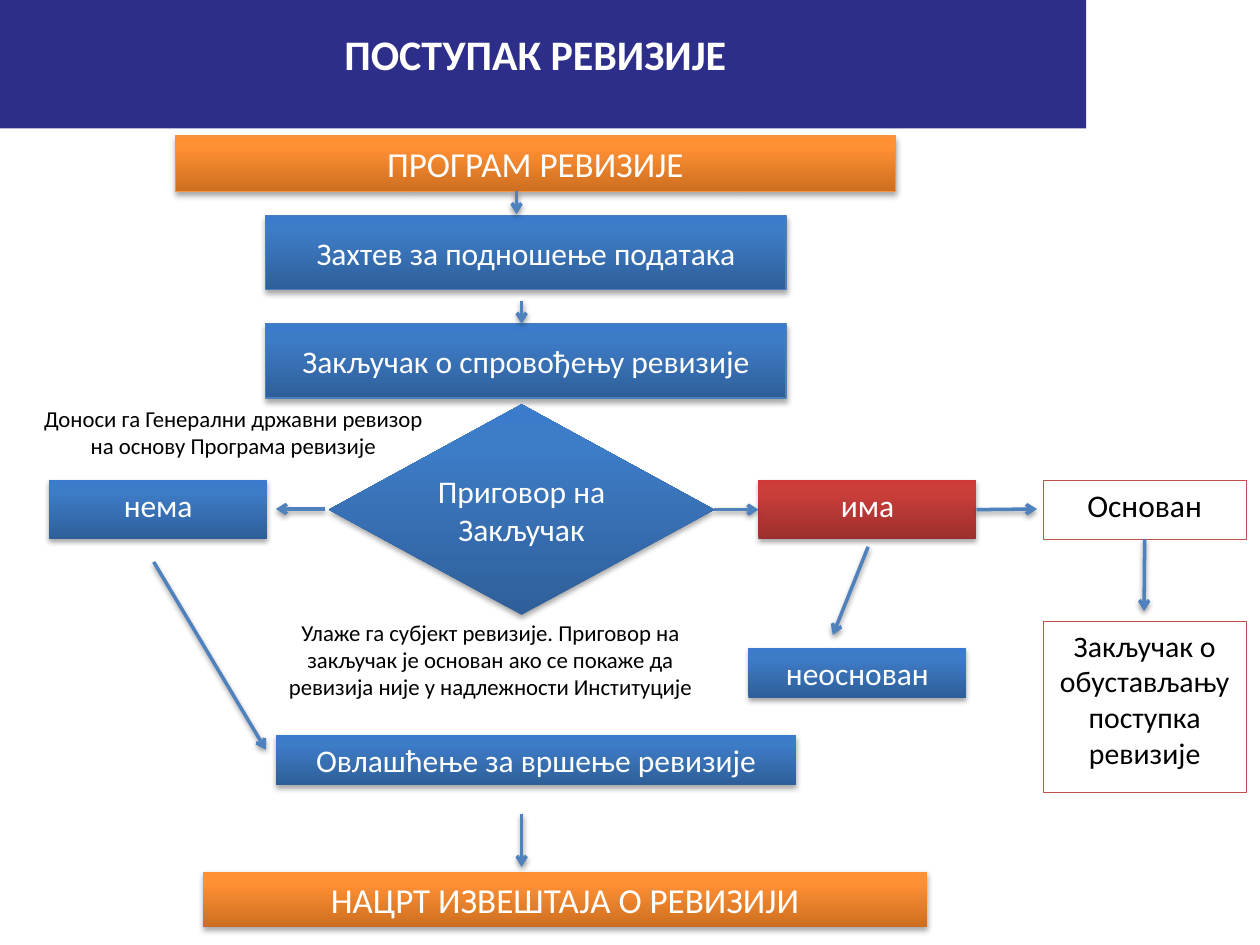
from dataclasses import dataclass

import copy
import lxml.etree
import pptx
import pptx.dml.color
import pptx.enum.shapes
import pptx.enum.text
import pptx.oxml
import pptx.oxml.ns
import pptx.util

Inches = pptx.util.Inches
Pt = pptx.util.Pt
SHAPES = pptx.enum.shapes.MSO_SHAPE
ANCHOR = pptx.enum.text.MSO_ANCHOR
qn = pptx.oxml.ns.qn

COLORS = {
    "band": "2D2D8A",
    "white": "FFFFFF",
    "black": "000000",
    "red_line": "C0504D",
    "orange_line": "F69240",
    "blue_line": "4B7EBC",
    "arrow": "4F81BD",
}
GRADIENTS = {
    "blue": ("2F5F99", "3D7CC7", "3A7CCB"),
    "orange": ("CC6E20", "FF9034", "FF9136"),
    "red": ("9C2F2D", "CB3E3A", "CE3B37"),
}
TOP, LEFT, BOTTOM, RIGHT = range(4)


@dataclass
class Box:
    left: float
    top: float
    width: float
    height: float

    def inner(self, left, top, width, height):
        return Box(self.left + left, self.top + top, width, height)

    def point(self, x, y):
        return Inches(self.left + x), Inches(self.top + y)

    def lengths(self):
        return [Inches(v) for v in (self.left, self.top, self.width, self.height)]


def rgb(value):
    return pptx.dml.color.RGBColor.from_string(value)


def add_shadow(shape, alpha, distance):
    properties = shape._element.spPr
    for effects in properties.findall(qn("a:effectLst")):
        properties.remove(effects)
    properties.append(pptx.oxml.parse_xml(
        f'<a:effectLst {pptx.oxml.ns.nsdecls("a")}>'
        f'<a:outerShdw blurRad="{Pt(3.1)}" dist="{Pt(distance)}" dir="5400000" rotWithShape="0">'
        f'<a:srgbClr val="000000"><a:alpha val="{alpha * 1000}"/></a:srgbClr>'
        '</a:outerShdw></a:effectLst>'))


def fill_gradient(fill, colors):
    fill.gradient()
    fill.gradient_angle = 90
    stop_list = fill._xPr.find(qn("a:gradFill")).find(qn("a:gsLst"))
    stop_list.append(copy.deepcopy(stop_list[0]))
    for stop, position, color in zip(fill.gradient_stops, (0, 0.8, 1), colors):
        stop.position = position
        stop.color.rgb = rgb(color)


def write(shape, text, size, color, anchor, bold=False):
    frame = shape.text_frame
    frame.word_wrap = True
    frame.vertical_anchor = anchor
    frame.text = text
    paragraph = frame.paragraphs[0]
    paragraph.alignment = pptx.enum.text.PP_ALIGN.CENTER
    font = paragraph.font
    font.name, font.size, font.bold = "Calibri", Pt(size), bold
    font.color.rgb = rgb(COLORS[color])


def add_block(slide, box, text, fill="blue", size=18, line=None, line_width=0.75,
              anchor=ANCHOR.TOP, kind=SHAPES.RECTANGLE):
    shape = slide.shapes.add_shape(kind, *box.lengths())
    shape.shadow.inherit = False
    if line:
        shape.line.color.rgb = rgb(COLORS[line])
        shape.line.width = Pt(line_width)
    else:
        shape.line.fill.background()
    if fill in GRADIENTS:
        fill_gradient(shape.fill, GRADIENTS[fill])
        add_shadow(shape, 35, 1.8)
    else:
        shape.fill.solid()
        shape.fill.fore_color.rgb = rgb(COLORS[fill])
    write(shape, text, size, "black" if fill == "white" else "white", anchor)
    return shape


def add_arrow(slide, box, start, end, begin=None, finish=None):
    arrow = slide.shapes.add_connector(
        pptx.enum.shapes.MSO_CONNECTOR.STRAIGHT, *box.point(*start), *box.point(*end))
    if begin:
        arrow.begin_connect(*begin)
    if finish:
        arrow.end_connect(*finish)
    arrow.line.color.rgb = rgb(COLORS["arrow"])
    arrow.line.width = Pt(2)
    lxml.etree.SubElement(arrow.line._get_or_add_ln(), qn("a:tailEnd"), type="arrow")
    add_shadow(arrow, 38, 1.6)


def build_header(slide, box):
    band = slide.shapes.add_shape(SHAPES.RECTANGLE, *box.lengths())
    band.shadow.inherit = False
    band.fill.solid()
    band.fill.fore_color.rgb = rgb(COLORS["band"])
    band.line.fill.background()
    title = slide.shapes.title
    band._element.addnext(title._element)
    title.left, title.top, title.width, title.height = box.inner(0.51, 0.18, 7.48, 0.5).lengths()
    write(title, "ПОСТУПАК РЕВИЗИЈЕ", 24, "white", ANCHOR.TOP, bold=True)


def build_notes(slide, box):
    notes = [
        ((0, 0, 3.3, 0.54), "Доноси га Генерални државни ревизор на основу Програма ревизије"),
        ((1.91, 1.7, 3.56, 0.76), "Улаже га субјект ревизије. Приговор на закључак је основан "
                                  "ако се покаже да ревизија није у надлежности Институције"),
    ]
    for place, text in notes:
        add_block(slide, box.inner(*place), text, "white", 13, "white", 2)


def build_preparation(slide, box):
    add_block(slide, box.inner(0, 0, box.width, 0.44), "ПРОГРАМ РЕВИЗИЈЕ",
              "orange", 20, "orange_line")
    steps = ["Захтев за подношење података", "Закључак о спровођењу ревизије"]
    for index, text in enumerate(steps):
        add_block(slide, box.inner(0.72, 0.63 + index * 0.86, 4.13, 0.59), text,
                  line="blue_line", anchor=ANCHOR.MIDDLE)
    add_arrow(slide, box, (2.71, 0.44), (2.71, 0.62))
    add_arrow(slide, box, (2.75, 1.31), (2.75, 1.49))


def build_decision(slide, box):
    decision = add_block(slide, box.inner(2.22, 0, 3.06, 1.67), "Приговор на Закључак",
                         anchor=ANCHOR.MIDDLE, kind=SHAPES.DIAMOND)
    add_block(slide, box.inner(0, 0.6, 1.73, 0.47), "нема")
    objection = add_block(slide, box.inner(5.63, 0.6, 1.73, 0.47), "има", "red")
    founded = add_block(slide, box.inner(7.89, 0.6, 1.61, 0.47), "Основан",
                        "white", 18, "red_line", 0.25)
    add_block(slide, box.inner(5.55, 1.93, 1.73, 0.4), "неоснован")
    add_block(slide, box.inner(7.89, 1.72, 1.61, 1.36),
              "Закључак о обустављању поступка ревизије", "white", 17, "red_line", 0.25)
    add_arrow(slide, box, (2.19, 0.83), (1.8, 0.83))
    add_arrow(slide, box, (5.28, 0.83), (5.63, 0.83), (decision, RIGHT), (objection, LEFT))
    add_arrow(slide, box, (7.36, 0.83), (7.84, 0.83), (objection, RIGHT))
    add_arrow(slide, box, (8.69, 1.07), (8.69, 1.64), (founded, BOTTOM))
    add_arrow(slide, box, (6.5, 1.13), (6.22, 1.83))
    add_arrow(slide, box, (0.83, 1.25), (1.72, 2.74))


def build_completion(slide, box):
    add_block(slide, box.inner(0.58, 0, 4.13, 0.4), "Овлашћење за вршење ревизије")
    add_block(slide, box.inner(0, 1.09, box.width, 0.44), "НАЦРТ ИЗВЕШТАЈА О РЕВИЗИЈИ",
              "orange", 20, anchor=ANCHOR.MIDDLE)
    add_arrow(slide, box, (2.53, 0.63), (2.53, 1.05))


def main():
    presentation = pptx.Presentation()
    presentation.slide_width, presentation.slide_height = Inches(10), Inches(7.5)
    slide = presentation.slides.add_slide(presentation.slide_layouts[5])
    build_header(slide, Box(0, 0, 8.62, 1.02))
    build_notes(slide, Box(0.2, 3.16, 5.47, 2.46))
    build_preparation(slide, Box(1.39, 1.08, 5.72, 2.08))
    build_decision(slide, Box(0.39, 3.21, 9.5, 3.08))
    build_completion(slide, Box(1.61, 5.83, 5.75, 1.53))
    presentation.save("out.pptx")


if __name__ == "__main__":
    main()
